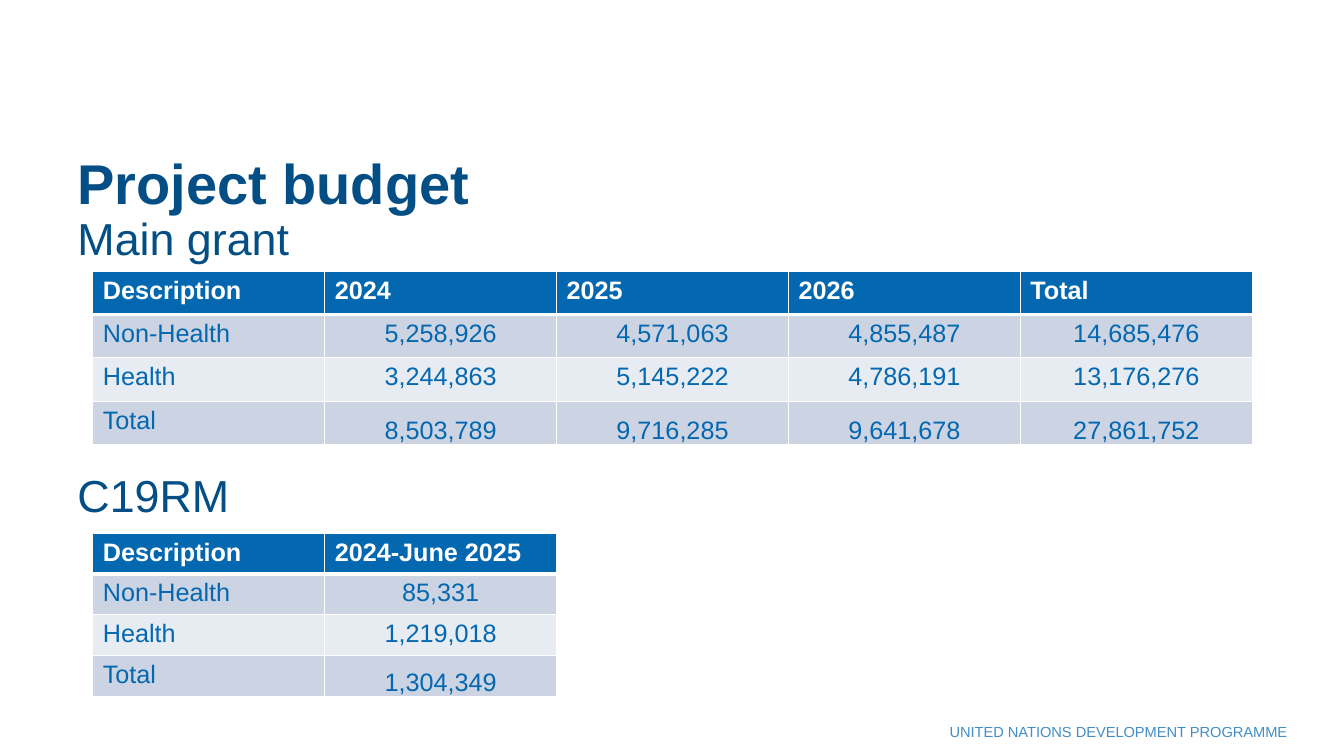
from lxml import etree
from pptx import Presentation
from pptx import util as u
from pptx.dml.color import RGBColor
from pptx.enum import text
from pptx.oxml.ns import qn

FONT = "Arial"
NAVY, BLUE, WHITE = "034E85", "0468B1", "FFFFFF"
BANDS = ["CCD4E4", "E7EBF2"]

TITLE = [("Project budget", 40, True), ("Main grant", 32, False)]
SUBTITLE = [("C19RM", 32, False)]
FOOTER = [("UNITED NATIONS DEVELOPMENT PROGRAMME", 10.5, False)]
MAIN_GRANT = [
    ("Description", "2024", "2025", "2026", "Total"),
    ("Non-Health", "5,258,926", "4,571,063", "4,855,487", "14,685,476"),
    ("Health", "3,244,863", "5,145,222", "4,786,191", "13,176,276"),
    ("Total", "8,503,789", "9,716,285", "9,641,678", "27,861,752"),
]
C19RM = [
    ("Description", "2024-June 2025"),
    ("Non-Health", "85,331"),
    ("Health", "1,219,018"),
    ("Total", "1,304,349"),
]

WIDTH, HEIGHT = 13.33, 7.5
TEXT_LEFT, TABLE_LEFT, CONTENT_WIDTH = 0.67, 0.92, 11.5
COLUMN = CONTENT_WIDTH / len(MAIN_GRANT[0])


def color(value):
    return RGBColor.from_string(value)


def add_run(paragraph, words, size, bold, hue):
    run = paragraph.add_run()
    run.text = words
    run.font.name, run.font.size, run.font.bold = FONT, u.Pt(size), bold
    run.font.color.rgb = color(hue)
    return run


def add_text(slide, box, lines, hue, anchor):
    """Place lines of (words, size, bold) in one paragraph and return it."""
    frame = slide.shapes.add_textbox(*map(u.Inches, box)).text_frame
    frame.word_wrap = True
    frame.vertical_anchor = anchor
    paragraph = frame.paragraphs[0]
    for number, line in enumerate(lines):
        if number:
            paragraph.add_line_break()
        add_run(paragraph, *line, hue)
    return paragraph


def add_borders(cell, top, bottom):
    """Draw white cell borders, with top and bottom widths in points."""
    properties = cell._tc.get_or_add_tcPr()
    for side, points in (("L", 1), ("R", 1), ("T", top), ("B", bottom)):
        line = etree.SubElement(properties, qn(f"a:ln{side}"), w=str(u.Pt(points)))
        fill = etree.SubElement(line, qn("a:solidFill"))
        etree.SubElement(fill, qn("a:srgbClr"), val=WHITE)


def add_budget(slide, rows, top, row_height):
    columns = len(rows[0])
    box = (TABLE_LEFT, top, columns * COLUMN, len(rows) * row_height)
    table = slide.shapes.add_table(len(rows), columns, *map(u.Inches, box)).table
    for r, row in enumerate(rows):
        table.rows[r].height = u.Inches(row_height)
        header = r == 0
        for c, words in enumerate(row):
            cell = table.cell(r, c)
            add_borders(cell, 3 if r == 1 else 1, 3 if header else 1)
            cell.fill.solid()
            cell.fill.fore_color.rgb = color(BLUE if header else BANDS[(r - 1) % 2])
            paragraph = cell.text_frame.paragraphs[0]
            add_run(paragraph, words, 18, header, WHITE if header else BLUE)
            if header or c == 0:
                continue
            paragraph.alignment = text.PP_ALIGN.CENTER
            if r == len(rows) - 1:
                cell.vertical_anchor = text.MSO_ANCHOR.BOTTOM
                cell.margin_left = cell.margin_right = cell.margin_top = u.Inches(0.01)
                cell.margin_bottom = 0


def main():
    presentation = Presentation()
    presentation.slide_width = u.Inches(WIDTH)
    presentation.slide_height = u.Inches(HEIGHT)
    slide = presentation.slides.add_slide(presentation.slide_layouts[6])

    footer = add_text(slide, (8.55, 7.12, 4.32, 0.28), FOOTER, BLUE, text.MSO_ANCHOR.TOP)
    footer.alignment = text.PP_ALIGN.RIGHT
    for hue in footer._p.iter(qn("a:srgbClr")):
        etree.SubElement(hue, qn("a:alpha"), val="75000")

    for lines, top, height in ((TITLE, 1.55, 1.13), (SUBTITLE, 4.48, 0.75)):
        box = (TEXT_LEFT, top, CONTENT_WIDTH, height)
        heading = add_text(slide, box, lines, NAVY, text.MSO_ANCHOR.BOTTOM)
        heading.line_spacing = 0.9

    add_budget(slide, MAIN_GRANT, 2.69, 0.43)
    add_budget(slide, C19RM, 5.29, 0.405)
    presentation.save("out.pptx")


if __name__ == "__main__":
    main()
